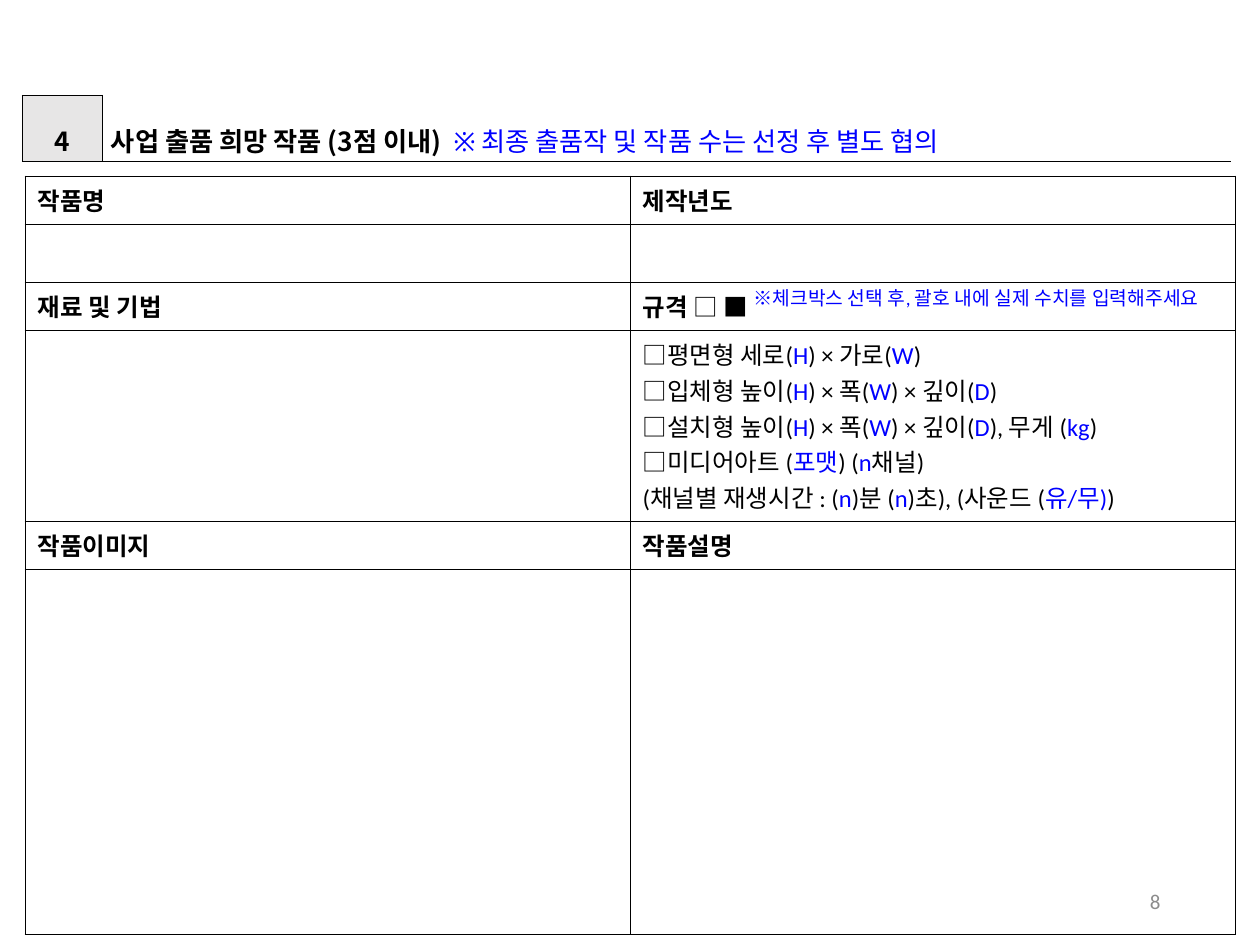
from lxml.etree import SubElement
from pptx import Presentation
from pptx.dml.color import RGBColor
from pptx.enum.text import MSO_ANCHOR as Anchor, PP_ALIGN as Align
from pptx.oxml.ns import qn
from pptx.util import Emu, Pt

PX = 914400 / 126
KOREAN, LATIN = "Noto Sans CJK KR", "Calibri"
BLACK, BLUE, GRAY = "000000", "0000FF", "8C8C8C"
PLAIN_TABLE = "{2D5ABB26-0587-4C30-8999-92F81FD0307C}"

# Content: text between bars is blue
NUMBER = "4"
TITLE = "사업 출품 희망 작품 (3점 이내)  "
TITLE_NOTE = "※ 최종 출품작 및 작품 수는 선정 후 별도 협의"
SIZE_NOTE = "※체크박스 선택 후, 괄호 내에 실제 수치를 입력해주세요"
PAGE = "8"
SIZES = [
    "□평면형 세로(|H|) × 가로(|W|)",
    "□입체형 높이(|H|) × 폭(|W|) × 깊이(|D|)",
    "□설치형 높이(|H|) × 폭(|W|) × 깊이(|D|), 무게 (|kg|)",
    "□미디어아트 (|포맷|) (|n|채널)",
    "(채널별 재생시간 : (|n|)분 (|n|)초), (사운드 (|유/무)|)",
]
HEADINGS = [("작품명", "제작년도"), ("재료 및 기법", "규격 "), ("작품이미지", "작품설명")]
CHECKBOXES = "□ ■"

# Layout in px
HEADER_AT, HEADER_COLS, HEADER_ROWS = (22, 95), (80, 1129), (66,)
FORM_AT, FORM_COLS, FORM_ROWS = (25, 176), (605, 605), (48, 58, 48, 191, 49, 365)
NOTE_BOX, PAGE_BOX = (741, 280, 506, 36), (890, 876, 283, 50)

HEADER_CELL = {"margin_left": 9, "margin_right": 9, "margin_top": 3, "margin_bottom": 3}


def px(value):
    return Emu(round(value * PX))


def rgb(value):
    return RGBColor.from_string(value)


def add_run(paragraph, text, size, color=BLACK, bold=False, face=LATIN):
    run = paragraph.add_run()
    run.text = text
    for name, value in {"size": Pt(size), "bold": bold, "name": face}.items():
        setattr(run.font, name, value)
    run.font.color.rgb = rgb(color)
    SubElement(run.font._element, qn("a:ea"), typeface=KOREAN)


def add_grid(shapes, at, cols, rows):
    frame = shapes.add_table(len(rows), len(cols), *map(px, (*at, sum(cols), sum(rows))))
    grid = frame.table
    grid.first_row = grid.horz_banding = False
    grid._tbl.tblPr.find(qn("a:tableStyleId")).text = PLAIN_TABLE
    for column, width in zip(grid.columns, cols):
        column.width = px(width)
    for row, height in zip(grid.rows, rows):
        row.height = px(height)
    return grid


def set_borders(cell, sides, points):
    properties = cell._tc.get_or_add_tcPr()
    for side in sides:
        line = SubElement(properties, qn(f"a:ln{side}"), w=str(Pt(points)))
        SubElement(SubElement(line, qn("a:solidFill")), qn("a:srgbClr"), val=BLACK)


def add_label(shapes, box, text, size, color, align, anchor):
    frame = shapes.add_textbox(*map(px, box)).text_frame
    frame.word_wrap = True
    frame.vertical_anchor = anchor
    frame.paragraphs[0].alignment = align
    add_run(frame.paragraphs[0], text, size, color)


def build():
    deck = Presentation()
    deck.slide_width, deck.slide_height = px(1260), px(945)
    shapes = deck.slides.add_slide(deck.slide_layouts[6]).shapes

    add_label(shapes, PAGE_BOX, PAGE, 12, GRAY, Align.RIGHT, Anchor.MIDDLE)

    # Section header
    header = add_grid(shapes, HEADER_AT, HEADER_COLS, HEADER_ROWS)
    number, title = header.cell(0, 0), header.cell(0, 1)
    for cell, sides, align in ((number, "LRTB", Align.CENTER), (title, "LB", Align.JUSTIFY)):
        for name, value in HEADER_CELL.items():
            setattr(cell, name, px(value))
        cell.vertical_anchor = Anchor.MIDDLE
        set_borders(cell, sides, 0.25)
        paragraph = cell.text_frame.paragraphs[0]
        paragraph.alignment, paragraph.line_spacing = align, 1.6
    number.fill.solid()
    number.fill.fore_color.rgb = rgb("E7E6E6")
    add_run(number.text_frame.paragraphs[0], NUMBER, 15, bold=True, face=KOREAN)
    title_line = title.text_frame.paragraphs[0]
    add_run(title_line, TITLE, 15, bold=True, face=KOREAN)
    add_run(title_line, TITLE_NOTE, 15, BLUE)

    # Artwork form: heading rows alternate with entry rows
    form = add_grid(shapes, FORM_AT, FORM_COLS, FORM_ROWS)
    for cell in form.iter_cells():
        set_borders(cell, "LRTB", 0.5)
        cell.fill.background()
    for i, pair in enumerate(HEADINGS):
        for j, heading in enumerate(pair):
            add_run(form.cell(2 * i, j).text_frame.paragraphs[0], heading, 14, bold=True)
    add_run(form.cell(2, 1).text_frame.paragraphs[0], CHECKBOXES, 14)

    # Size options
    options = form.cell(3, 1).text_frame
    for i, option in enumerate(SIZES):
        paragraph = options.add_paragraph() if i else options.paragraphs[0]
        for j, part in enumerate(option.split("|")):
            add_run(paragraph, part, 14, BLUE if j % 2 else BLACK)

    add_label(shapes, NOTE_BOX, SIZE_NOTE, 11, BLUE, Align.LEFT, Anchor.TOP)
    deck.save("out.pptx")


if __name__ == "__main__":
    build()
